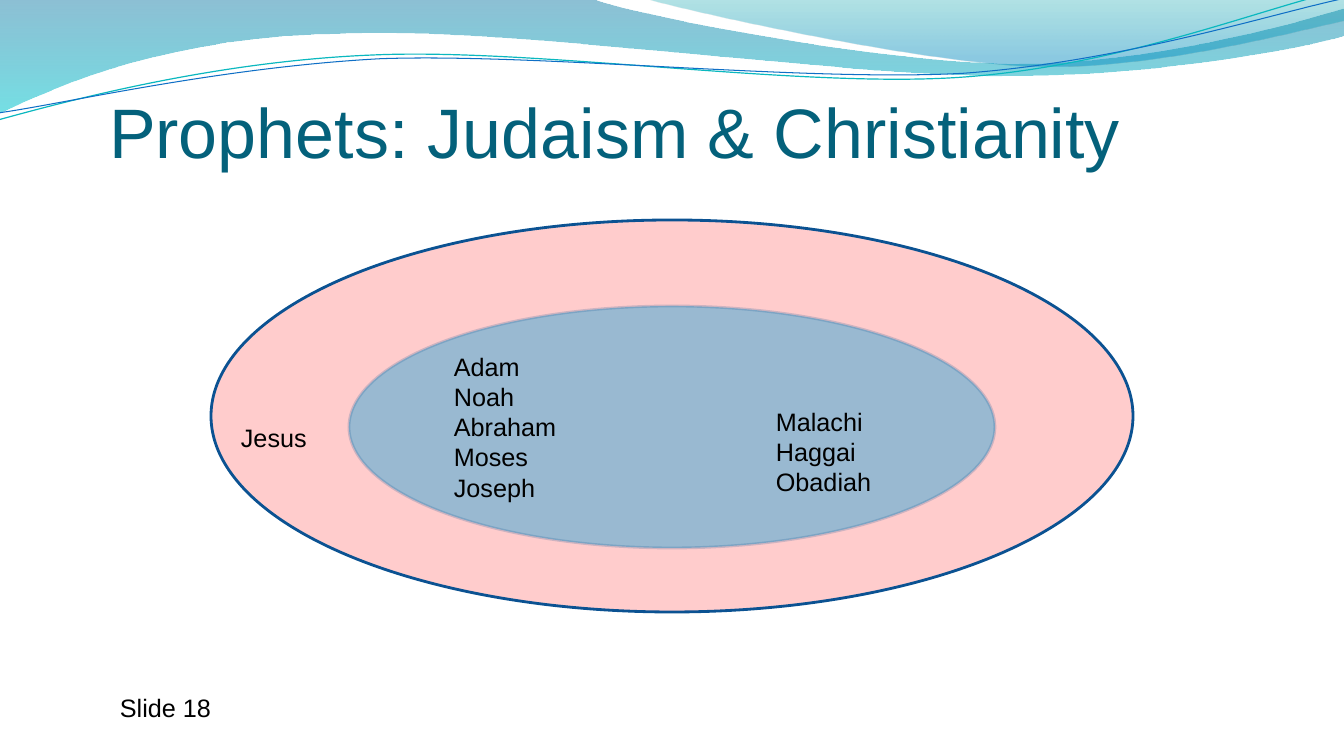
from dataclasses import dataclass

from lxml.etree import Element, SubElement
from pptx import Presentation
from pptx.dml.color import RGBColor as RGB
from pptx.enum.shapes import MSO_SHAPE as Shape
from pptx.enum.text import MSO_ANCHOR as Anchor, MSO_AUTO_SIZE as AutoSize, PP_ALIGN as Align
from pptx.oxml.ns import qn
from pptx.util import Pt

PX = 12192000 / 1344


@dataclass(frozen=True)
class Theme:
    font: str = "Arial"
    title_size: int = 50
    body_size: int = 18
    title: str = "04617B"
    text: str = "000000"
    outline: str = "0B5292"
    christianity: str = "FF0000"
    judaism: str = "009DD9"
    wide_wave: tuple = (("0074A1", 0, 45), ("00C6CF", 1, 55))
    corner_wave: tuple = (("00A1A9", 0, 30), ("008BBF", 0.8, 45))
    teal_line: str = "0AB8BF"
    blue_line: str = "0F6FC6"


def emu(*lengths):
    return [round(v * PX) for v in lengths]


def set_opacity(sp, *percents):
    colors = sp._element.spPr.iter(qn("a:srgbClr"))
    for color, percent in zip(colors, percents):
        SubElement(color, qn("a:alpha")).set("val", str(percent * 1000))


def bend(sp, steps):
    segments = iter(list(sp._element.spPr.iter(qn("a:lnTo"))))
    for step in steps:
        parts = [next(segments) for _ in range(len(step) // 2)]
        if len(parts) == 3:
            cubic = Element(qn("a:cubicBezTo"))
            parts[0].addprevious(cubic)
            for part in parts:
                cubic.append(part[0])
                part.getparent().remove(part)


class SlideBuilder:
    def __init__(self, slide, theme):
        self.s = slide
        self.theme = theme

    def format_text(self, p, size, color):
        p.font.name = self.theme.font
        p.font.size = Pt(size)
        p.font.color.rgb = RGB.from_string(color)
        p.alignment = Align.LEFT

    def title(self, text, box):
        sp = self.s.shapes.title
        sp.left, sp.top, sp.width, sp.height = emu(*box)
        tf = sp.text_frame
        tf.text = text
        tf.auto_size = AutoSize.NONE
        tf.vertical_anchor = Anchor.BOTTOM
        tf.margin_left = tf.margin_right = tf.margin_bottom = 0
        self.format_text(tf.paragraphs[0], self.theme.title_size, self.theme.title)

    def text(self, lines, box):
        tf = self.s.shapes.add_textbox(*emu(*box)).text_frame
        tf.word_wrap = True
        tf.auto_size = AutoSize.SHAPE_TO_FIT_TEXT
        tf.text = "\n".join(lines)
        for p in tf.paragraphs:
            self.format_text(p, self.theme.body_size, self.theme.text)

    def ellipse(self, box, color, fill_opacity, line_opacity=100):
        sp = self.s.shapes.add_shape(Shape.OVAL, *emu(*box))
        sp.shadow.inherit = False
        sp.fill.solid()
        sp.fill.fore_color.rgb = RGB.from_string(color)
        sp.line.color.rgb = RGB.from_string(self.theme.outline)
        sp.line.width = Pt(2)
        set_opacity(sp, fill_opacity, line_opacity)

    def freeform(self, start, steps, close):
        points = [emu(*step[i:i + 2]) for step in steps for i in range(0, len(step), 2)]
        builder = self.s.shapes.build_freeform(*emu(*start))
        builder.add_line_segments(points, close=close)
        sp = builder.convert_to_shape()
        bend(sp, steps)
        sp.shadow.inherit = False
        return sp

    def wave(self, start, steps, gradient):
        sp = self.freeform(start, steps, True)
        sp.line.fill.background()
        sp.fill.gradient()
        sp.fill.gradient_angle = 270
        for stop, (color, position, _) in zip(sp.fill.gradient_stops, gradient):
            stop.color.rgb = RGB.from_string(color)
            stop.position = position
        set_opacity(sp, *(opacity for _, _, opacity in gradient))

    def curve(self, start, steps, color, width):
        sp = self.freeform(start, steps, False)
        sp.rotation = 357.3
        sp.fill.background()
        sp.line.color.rgb = RGB.from_string(color)
        sp.line.width = Pt(width)


def main():
    prs = Presentation()
    prs.slide_width, prs.slide_height = emu(1344, 756)
    theme = Theme()
    page = SlideBuilder(prs.slides.add_slide(prs.slide_layouts[5]), theme)

    page.wave((0, 0), [
        (592, -1),
        (639, 17, 892, 64, 1019, 64),
        (1148, 64, 1288, 26, 1344, 9),
        (1346, 36),
        (1321, 44, 1169, 77, 1002, 76),
        (836, 76, 513, 28, 346, 34),
        (173, 36, 61, 84, -1, 114),
    ], theme.wide_wave)
    page.wave((644, -1), [
        (684, 11, 916, 62, 1033, 66),
        (1150, 70, 1292, 32, 1344, 21),
        (1344, 0),
    ], theme.corner_wave)
    page.curve((-3, 88), [
        (64, 73, 213, 40, 372, 41),
        (532, 41, 794, 94, 957, 91),
        (1118, 88, 1264, 36, 1344, 22),
    ], theme.teal_line, 0.85)
    page.curve((-2, 81), [
        (63, 75, 220, 46, 381, 45),
        (541, 47, 801, 88, 962, 87),
        (1123, 83, 1273, 42, 1347, 30),
    ], theme.blue_line, 0.75)

    page.ellipse((211, 220, 922, 392), theme.christianity, 20)
    page.title("Prophets: Judaism & Christianity", (109, 46, 1210, 127))
    page.ellipse((349, 306, 646, 242), theme.judaism, 40, 20)
    page.text(["Adam", "Noah", "Abraham", "Moses", "Joseph"], (444, 346, 157, 163))
    page.text(["Malachi", "Haggai", "Obadiah"], (766, 401, 181, 102))
    page.text(["Jesus"], (231, 417, 103, 40))
    page.text(["Slide 18"], (110, 687, 119, 40))

    prs.save("out.pptx")


if __name__ == "__main__":
    main()
